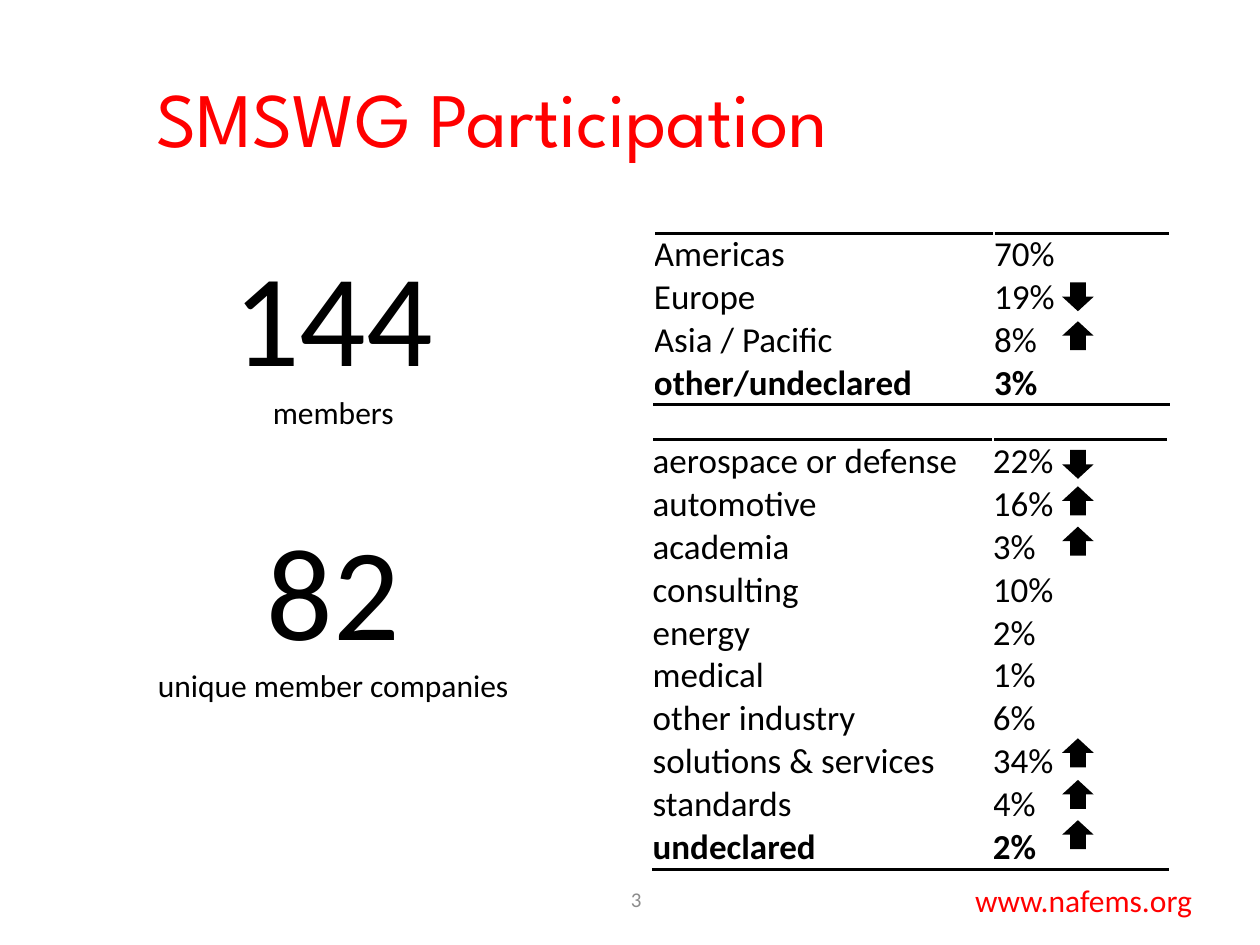
from lxml import etree
from pptx import Presentation
from pptx.dml.color import RGBColor
from pptx.enum.shapes import MSO_SHAPE
from pptx.enum.text import MSO_ANCHOR, PP_ALIGN
from pptx.oxml import parse_xml
from pptx.oxml.ns import nsdecls
from pptx.util import Inches, Pt

UP_ARROW = MSO_SHAPE.UP_ARROW
TOP, MIDDLE = MSO_ANCHOR.TOP, MSO_ANCHOR.MIDDLE
LEFT, CENTER = PP_ALIGN.LEFT, PP_ALIGN.CENTER

THEME = {
    "red": RGBColor(255, 0, 0), "black": RGBColor(0, 0, 0),
    "white": RGBColor(255, 255, 255), "gray": RGBColor(0x8C, 0x8C, 0x8C),
    "heading": "League Spartan", "body": "Calibri",
    "title": 44, "figure": 75, "table": 20, "label": 18, "number": 12,
}

prs = Presentation()
prs.slide_width, prs.slide_height = Inches(10), Inches(7.5)
COL, ROW = prs.slide_width / 100, prs.slide_height / 75
s = prs.slides.add_slide(prs.slide_layouts[5])


def grid(left, top, width, height):
    return int(left * COL), int(top * ROW), int(width * COL), int(height * ROW)


def write(tf, lines, align=LEFT, anchor=MIDDLE, face="body", bold=False):
    tf.word_wrap = True
    tf.vertical_anchor = anchor
    tf.text = "\n".join(text for text, size, color in lines)
    for p, (text, size, color) in zip(tf.paragraphs, lines):
        p.alignment = align
        font = p.runs[0].font
        font.name, font.size, font.bold = THEME[face], Pt(THEME[size]), bold
        font.color.rgb = THEME[color]


title = s.shapes.title
title.left, title.top, title.width, title.height = grid(11.4, 3, 83.6, 12.5)
write(title.text_frame, [("SMSWG Participation", "title", "red")], face="heading")

text_boxes = [
    ((69.7, 69.4, 32.6, 4), MIDDLE, [("www.nafems.org", "label", "red")]),
    ((45.7, 69.4, 9.6, 4), MIDDLE, [("3", "number", "gray")]),
    ((15.4, 18.2, 22.1, 16.7), TOP,
     [("144", "figure", "black"), ("members", "label", "black")]),
    ((11.4, 39.9, 30.1, 16.7), TOP,
     [("82", "figure", "black"), ("unique member companies", "label", "black")]),
]
for place, anchor, lines in text_boxes:
    box = s.shapes.add_textbox(*grid(*place))
    write(box.text_frame, lines, CENTER, anchor)

regions = [("Americas", "70%"), ("Europe", "19%"), ("Asia / Pacific", "8%"),
           ("other/undeclared", "3%")]
sectors = [("aerospace or defense", "22%"), ("automotive", "16%"),
           ("academia", "3%"), ("consulting", "10%"), ("energy", "2%"),
           ("medical", "1%"), ("other industry", "6%"),
           ("solutions & services", "34%"), ("standards", "4%"),
           ("undeclared", "2%")]
ROW_HEIGHT = 3.41
for left, top, rows in [(51.9, 18.5, regions), (51.8, 34.9, sectors)]:
    place = grid(left, top, 40.9, ROW_HEIGHT * len(rows))
    table = s.shapes.add_table(len(rows), 2, *place).table
    table.first_row = table.horz_banding = False
    table.columns[0].width, table.columns[1].width = int(27 * COL), int(13.9 * COL)
    last = len(rows) - 1
    for i, row in enumerate(rows):
        for j, text in enumerate(row):
            cell = table.cell(i, j)
            cell.margin_left = cell.margin_right = 0
            cell.margin_top = cell.margin_bottom = 0
            cell.vertical_anchor = MIDDLE
            cell.fill.solid()
            cell.fill.fore_color.rgb = THEME["white"]
            write(cell.text_frame, [(text, "table", "black")], bold=i == last)
            if i in (0, last):
                edge = "lnT" if i == 0 else "lnB"
                cell._tc.get_or_add_tcPr().insert(0, parse_xml(
                    f'<a:{edge} {nsdecls("a")} w="{Pt(2)}"><a:solidFill>'
                    f'<a:srgbClr val="{THEME["black"]}"/></a:solidFill></a:{edge}>'))
    for cell in table.iter_cells():
        body = cell._tc.txBody.bodyPr
        for name in list(body.attrib):
            del body.attrib[name]
        etree.strip_elements(body, "{*}normAutofit")

trends = [(25.5, 0), (22.4, 180), (41.8, 0), (61.9, 0),
          (38.6, 0), (58.6, 0), (65.1, 0), (35.7, 180)]
for top, rotation in trends:
    arrow = s.shapes.add_shape(UP_ARROW, *grid(84.3, top, 2.5, 2.3))
    arrow.rotation = rotation
    arrow.shadow.inherit = False
    arrow.fill.solid()
    arrow.fill.fore_color.rgb = THEME["black"]
    arrow.line.fill.background()

prs.save("out.pptx")
